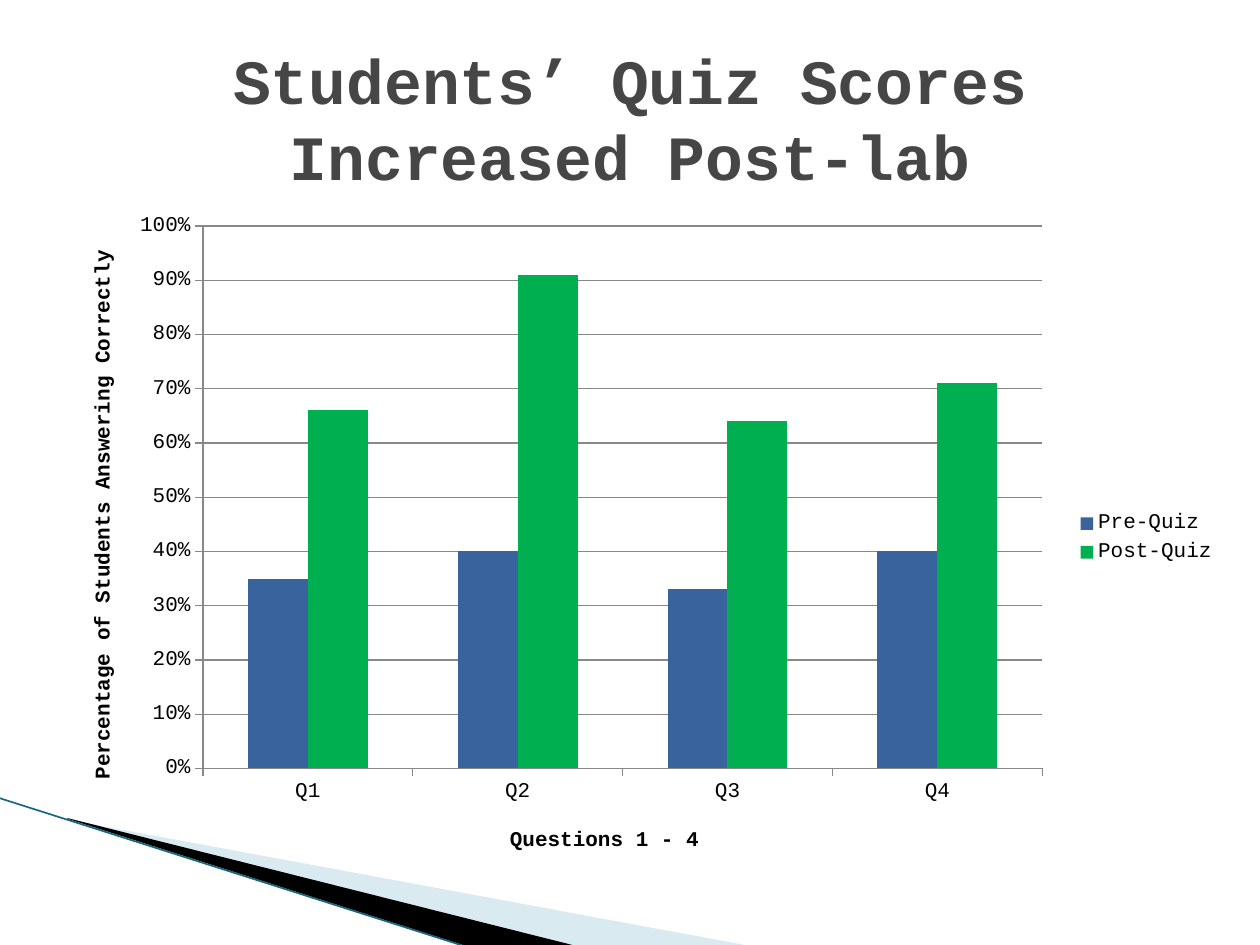
from lxml import etree
from pptx import Presentation
from pptx.chart.data import CategoryChartData
from pptx.dml.color import RGBColor
from pptx.enum.chart import XL_CHART_TYPE as CT, XL_LEGEND_POSITION as LP, XL_TICK_MARK as TM
from pptx.enum.shapes import MSO_CONNECTOR as MC
from pptx.enum.text import MSO_ANCHOR as MA, PP_ALIGN as PA
from pptx.oxml import parse_xml
from pptx.oxml.ns import nsdecls, qn
from pptx.util import Pt

SCALE = 914400 / 126
BLACK = RGBColor(0, 0, 0)
GREY = RGBColor(0x46, 0x46, 0x46)
GRID = RGBColor(0x88, 0x88, 0x88)
PALE = RGBColor(0xA0, 0xCB, 0xDC)
TEAL = RGBColor(0x16, 0x69, 0x7D)
BLUE = RGBColor(0x39, 0x63, 0x9D)
GREEN = RGBColor(0x00, 0xB0, 0x50)


def px(n):
    return round(n * SCALE)


def write(tf, text, size=12, color=BLACK, bold=True, font="Courier New", align=PA.CENTER):
    p = tf.paragraphs[0]
    p.alignment = align
    r = p.add_run()
    r.text = text
    f = r.font
    f.name, f.size, f.bold = font, Pt(size), bold
    f.color.rgb = color


def place(parent, index, **fractions):
    for old in parent.findall(qn("c:layout")):
        parent.remove(old)
    modes = "".join(f'<c:{k}Mode val="edge"/>' for k in "xy")
    values = "".join(f'<c:{k} val="{v}"/>' for k, v in fractions.items())
    target = '<c:layoutTarget val="inner"/>' if "w" in fractions else ""
    parent.insert(index, parse_xml(
        f'<c:layout {nsdecls("c")}><c:manualLayout>{target}{modes}{values}'
        '</c:manualLayout></c:layout>'))


class Deck:
    """Holds the chart style and the current slide."""

    def __init__(self, slide, font="Courier New", size=12):
        self.shapes = slide.shapes
        self.font, self.size = font, size

    def wedge(self, points, color, alpha=100):
        fb = self.shapes.build_freeform(*points[0], scale=SCALE)
        fb.add_line_segments(points[1:], close=True)
        sp = fb.convert_to_shape()
        sp.shadow.inherit = False
        sp.line.fill.background()
        sp.fill.solid()
        sp.fill.fore_color.rgb = color
        if alpha < 100:
            clr = sp.fill._xPr.find(".//" + qn("a:srgbClr"))
            etree.SubElement(clr, qn("a:alpha"), val=str(alpha * 1000))

    def line(self, start, end, color, width):
        cn = self.shapes.add_connector(MC.STRAIGHT, *map(px, start + end))
        cn.line.color.rgb = color
        cn.line.width = Pt(width)
        etree.SubElement(cn._element.spPr, qn("a:effectLst"))

    def text(self, box, text, **fmt):
        tf = self.shapes.add_textbox(*map(px, box)).text_frame
        tf.word_wrap = True
        tf.vertical_anchor = MA.MIDDLE
        write(tf, text, **fmt)

    def axis(self, axis, title, x, y):
        axis.major_tick_mark, axis.minor_tick_mark = TM.OUTSIDE, TM.NONE
        axis.format.line.color.rgb = GRID
        write(axis.axis_title.text_frame, title, size=self.size, font=self.font)
        place(axis.axis_title._element, 1, x=x, y=y)

    def columns(self, box, cats, series):
        data = CategoryChartData(number_format="0%")
        data.categories = cats
        for name, values, _ in series:
            data.add_series(name, values)
        chart = self.shapes.add_chart(CT.COLUMN_CLUSTERED, *map(px, box), data).chart
        chart.has_title = False
        chart.font.name, chart.font.size = self.font, Pt(self.size)
        chart.font.color.rgb = BLACK
        chart.has_legend = True
        chart.legend.position = LP.RIGHT
        chart.legend.include_in_layout = False
        plot = chart.plots[0]
        plot.gap_width, plot.overlap, plot.vary_by_categories = 150, 0, False
        for s, (_, _, color) in zip(plot.series, series):
            s.format.fill.solid()
            s.format.fill.fore_color.rgb = color
        self.axis(chart.category_axis, "Questions 1 - 4", 0.38, 0.92)
        val = chart.value_axis
        self.axis(val, "Percentage of Students Answering Correctly", 0.02, 0.07)
        val.minimum_scale, val.maximum_scale, val.major_unit = 0, 1, 0.1
        val.tick_labels.number_format = "0%"
        val.tick_labels.number_format_is_linked = False
        val.has_major_gridlines = True
        val.major_gridlines.format.line.color.rgb = GRID
        place(chart._chartSpace.chart.plotArea, 0, x=0.12, y=0.04, w=0.72, h=0.8)


def main():
    prs = Presentation()
    prs.slide_width, prs.slide_height = px(1260), px(945)
    s = Deck(prs.slides.add_slide(prs.slide_layouts[6]))
    s.wedge([(69, 820), (750, 946), (575, 946), (69, 819)], PALE, alpha=40)
    s.wedge([(67, 818), (576, 946), (469, 947), (68, 819)], BLACK)
    s.line((-1, 798), (467, 947), TEAL, 0.95)
    s.text((63, 38, 1134, 158), "Students’ Quiz Scores Increased Post-lab", size=36, color=GREY)
    s.columns((63, 199, 1166, 678), ["Q1", "Q2", "Q3", "Q4"], [
        ("Pre-Quiz", (0.35, 0.4, 0.33, 0.4), BLUE),
        ("Post-Quiz", (0.66, 0.91, 0.64, 0.71), GREEN)])
    prs.save("out.pptx")


if __name__ == "__main__":
    main()
